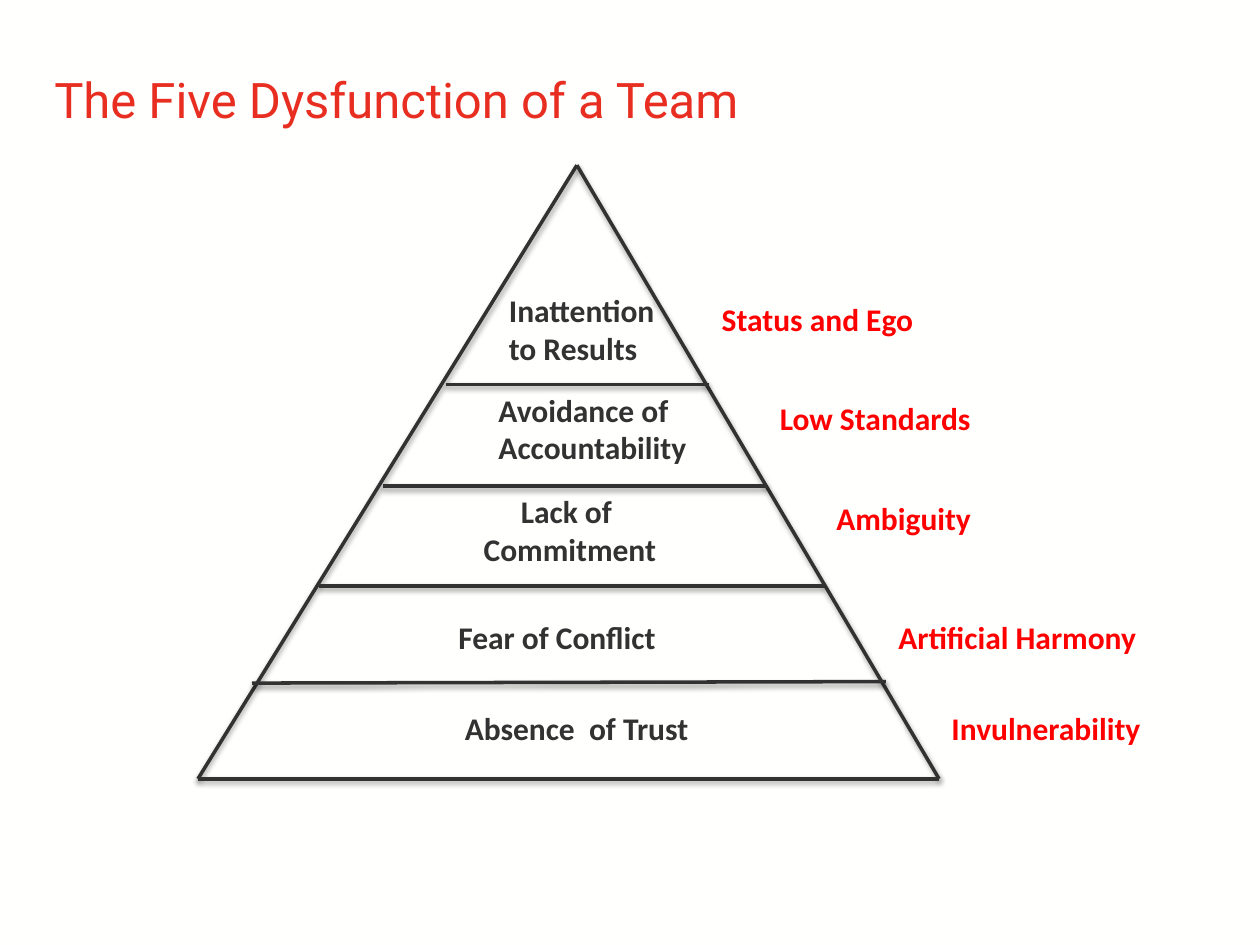
from dataclasses import dataclass
from lxml import etree
from pptx import Presentation
from pptx.dml.color import RGBColor
from pptx.enum.shapes import MSO_CONNECTOR
from pptx.enum.text import MSO_ANCHOR, MSO_AUTO_SIZE, PP_ALIGN
from pptx.oxml.ns import qn
from pptx.util import Cm, Pt

STRAIGHT = MSO_CONNECTOR.STRAIGHT
TOP = MSO_ANCHOR.TOP
FIT = MSO_AUTO_SIZE.SHAPE_TO_FIT_TEXT
LEFT, CENTER = PP_ALIGN.LEFT, PP_ALIGN.CENTER


@dataclass(frozen=True)
class Theme:
    background: RGBColor = RGBColor(0xFF, 0xFF, 0xFE)
    title: RGBColor = RGBColor(0xE8, 0x2E, 0x21)
    ink: RGBColor = RGBColor(0x31, 0x32, 0x31)
    accent: RGBColor = RGBColor(0xFF, 0x00, 0x00)
    title_font: str = "Roboto"
    body_font: str = "Calibri"
    title_size: Pt = Pt(28)
    body_size: Pt = Pt(18)
    line_width: Pt = Pt(2)


@dataclass(frozen=True)
class Level:
    text: str
    label: tuple
    caption: str
    caption_top: float
    caption_width: float
    base: tuple
    align: PP_ALIGN = LEFT


THEME = Theme()
TITLE_BOX = (0.84, 1.27, 22.86, 3.18)
PYRAMID_BOX = (3.99, 3.33, 14.94, 12.37)
APEX_X = 7.64
LINE_HEIGHT, PADDING = 0.77, 0.25

# label: left, top, width; base: left, right, left y, right y
LEVELS = [
    Level("Inattention\nto Results", (6.02, 2.41, 3.51),
          "Status and Ego", 2.59, 4.45, (5.0, 10.31, 4.42, 4.42)),
    Level("Avoidance of\nAccountability", (5.81, 4.42, 4.37),
          "Low Standards", 4.59, 4.42, (3.73, 11.48, 6.47, 6.47)),
    Level("Lack of \nCommitment", (5.48, 6.47, 4.04),
          "Ambiguity", 6.6, 3.25, (2.44, 12.62, 8.48, 8.48), CENTER),
    Level("Fear of Conflict", (5.0, 9.01, 4.55),
          "Artificial Harmony", 9.01, 5.38, (1.09, 13.87, 10.44, 10.41)),
    Level("Absence  of Trust", (5.13, 10.84, 5.11),
          "Invulnerability", 10.84, 4.39, (0, 14.94, 12.37, 12.37)),
]


def set_font(p, name, size, color, bold=False):
    for r in p.runs:
        r.font.name = name
        r.font.size = size
        r.font.bold = bold
        r.font.color.rgb = color


def add_line(s, x1, y1, x2, y2):
    line = s.shapes.add_connector(STRAIGHT, Cm(x1), Cm(y1), Cm(x2), Cm(y2))
    line.line.color.rgb = THEME.ink
    line.line.width = THEME.line_width
    effects = etree.SubElement(line._element.spPr, qn("a:effectLst"))
    shadow = etree.SubElement(
        effects, qn("a:outerShdw"), blurRad=str(Pt(3.1)), dist=str(Pt(1.6)),
        dir="5400000", rotWithShape="0")
    color = etree.SubElement(shadow, qn("a:srgbClr"), val="000000")
    etree.SubElement(color, qn("a:alpha"), val="38000")


def add_label(s, text, left, top, width, color, align=LEFT):
    height = PADDING + LINE_HEIGHT * len(text.split("\n"))
    sp = s.shapes.add_textbox(Cm(left), Cm(top), Cm(width), Cm(height))
    tf = sp.text_frame
    tf.word_wrap = False
    tf.auto_size = FIT
    tf.text = text
    for p in tf.paragraphs:
        p.alignment = align
        set_font(p, THEME.body_font, THEME.body_size, color, bold=True)


def add_title(s, text, box):
    sp = s.shapes.title
    sp.left, sp.top, sp.width, sp.height = map(Cm, box)
    tf = sp.text_frame
    tf.vertical_anchor = TOP
    tf.text = text
    p = tf.paragraphs[0]
    p.alignment = LEFT
    set_font(p, THEME.title_font, THEME.title_size, THEME.title)


def add_pyramid(s, levels, box):
    x, y, width, height = box
    for corner in (0, width):
        add_line(s, x + APEX_X, y, x + corner, y + height)
    for level in levels:
        base_left, base_right, left_y, right_y = level.base
        add_line(s, x + base_left, y + left_y, x + base_right, y + right_y)
        left, top, label_width = level.label
        add_label(s, level.text, x + left, y + top, label_width,
                  THEME.ink, level.align)
        add_label(s, level.caption, x + base_right, y + level.caption_top,
                  level.caption_width, THEME.accent)


def main():
    prs = Presentation()
    prs.slide_width, prs.slide_height = Cm(25.4), Cm(19.05)
    s = prs.slides.add_slide(prs.slide_layouts.get_by_name("Title Only"))
    s.background.fill.solid()
    s.background.fill.fore_color.rgb = THEME.background
    add_title(s, "The Five Dysfunction of a Team", TITLE_BOX)
    add_pyramid(s, LEVELS, PYRAMID_BOX)
    prs.save("out.pptx")


if __name__ == "__main__":
    main()
